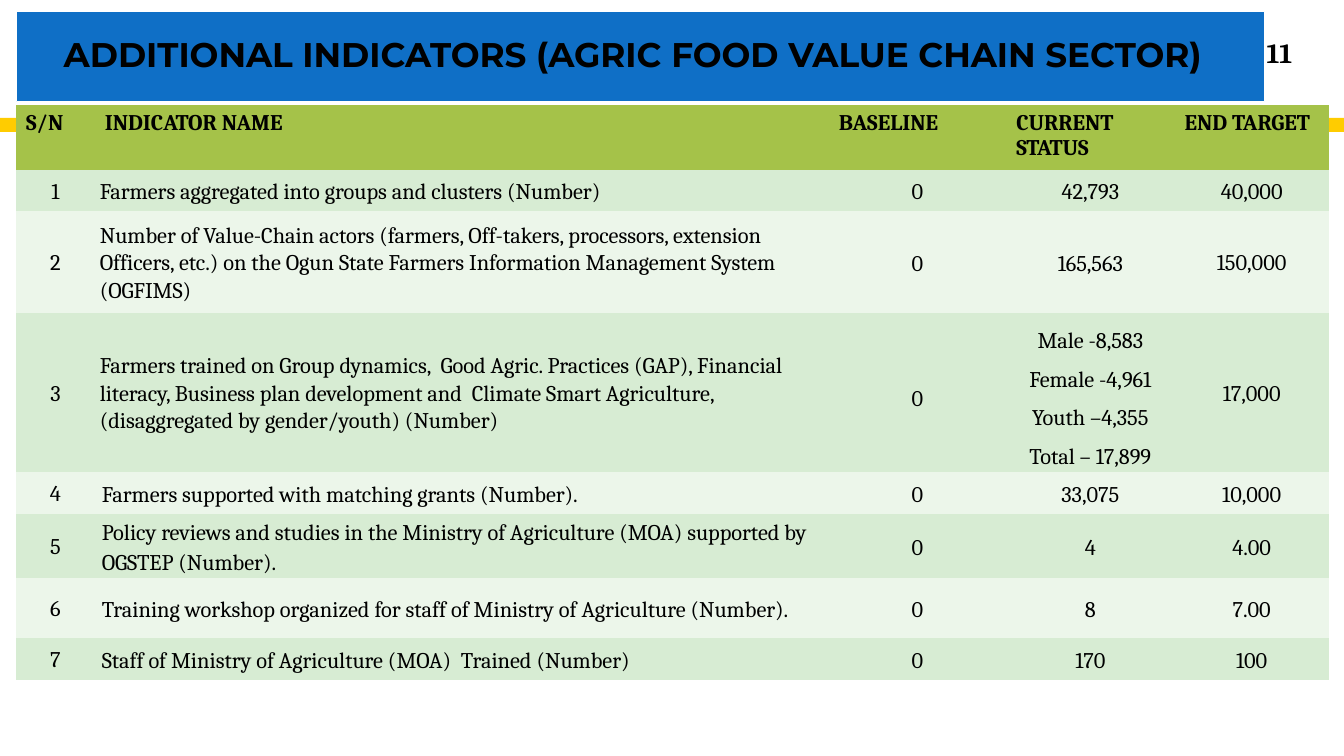
from pptx import Presentation
from pptx.dml.color import RGBColor
from pptx.enum.shapes import MSO_SHAPE
from pptx.enum.text import MSO_ANCHOR, PP_ALIGN
from pptx.oxml.ns import qn
from pptx.util import Inches, Pt

TITLE = "ADDITIONAL INDICATORS (AGRIC FOOD VALUE CHAIN SECTOR)"
PAGE_NUMBER = "11"
HEADINGS = ("S/N", "INDICATOR NAME", "BASELINE", "CURRENT STATUS", "END TARGET")
# indicator, baseline, current status, end target
INDICATORS = [
    ("Farmers aggregated into groups and clusters (Number)", "0", "42,793", "40,000"),
    ("Number of Value-Chain actors (farmers, Off-takers, processors, extension "
     "Officers, etc.) on the Ogun State Farmers Information Management System (OGFIMS)",
     "0", "165,563", "150,000"),
    ("Farmers trained on Group dynamics,  Good Agric. Practices (GAP), Financial "
     "literacy, Business plan development and  Climate Smart Agriculture, "
     "(disaggregated by gender/youth) (Number)",
     "0", "Male -8,583\nFemale -4,961\nYouth –4,355\nTotal – 17,899", "17,000"),
    ("Farmers supported with matching grants (Number).", "0", "33,075", "10,000"),
    ("Policy reviews and studies in the Ministry of Agriculture (MOA) supported by "
     "OGSTEP (Number).", "0", "4", "4.00"),
    ("Training workshop organized for staff of Ministry of Agriculture (Number).",
     "0", "8", "7.00"),
    ("Staff of Ministry of Agriculture (MOA)  Trained (Number)", "0", "170", "100"),
]
COLUMN_WIDTHS = (0.78, 7.28, 1.76, 1.67, 1.53)
ROW_HEIGHTS = (0.65, 0.4, 1.02, 1.57, 0.42, 0.64, 0.59, 0.42)
SERIAL, INDICATOR, BASELINE, STATUS, TARGET = range(5)
GROUPED_ROW = 3  # the row whose status is broken down by gender and youth
COMPACT_ROWS = (1, 2, 3)

BLACK, WHITE, BLUE, YELLOW = "000000", "FFFFFF", "0F6FC6", "FFCC00"
HEADING_GREEN, ROW_GREENS = "A5C249", ("ECF6EA", "D7ECD3")
NO_TABLE_STYLE = "{2D5ABB26-0587-4C30-8999-92F81FD0307C}"


def color(hex_string):
    return RGBColor.from_string(hex_string)


def fill(part, hex_string):
    part.fill.solid()
    part.fill.fore_color.rgb = color(hex_string)


def set_all(target, values):
    for attribute, value in values.items():
        setattr(target, attribute, value)


def write(frame, text, paragraph_format, size, font="Cambria", bold=False):
    frame.text = text
    for paragraph in frame.paragraphs:
        set_all(paragraph, paragraph_format)
        for run in paragraph.runs:
            set_all(run.font, {"size": Pt(size), "name": font, "bold": bold})
            run.font.color.rgb = color(BLACK)


def cell_format(row, column):
    """Return the margins and the paragraph format of a body cell."""
    compact = column == SERIAL or (
        row in COMPACT_ROWS and column in (INDICATOR, TARGET))
    if compact:
        side, top, spacing = (0.05 if column == INDICATOR else 0.01), 0.01, 1.07
    else:
        side, top, spacing = 0.07, 0, 1.5 if row == GROUPED_ROW else 1.15
    margins = {"margin_left": Inches(side), "margin_right": Inches(side),
               "margin_top": Inches(top), "margin_bottom": 0,
               "vertical_anchor": MSO_ANCHOR.MIDDLE}
    paragraph_format = {
        "alignment": PP_ALIGN.LEFT if column == INDICATOR else PP_ALIGN.CENTER,
        "line_spacing": spacing, "space_after": Pt(8 if compact else 0)}
    return margins, paragraph_format


def add_band(slide):
    band = slide.shapes.add_shape(
        MSO_SHAPE.RECTANGLE, 0, Inches(1.17), Inches(13.33), Inches(0.14))
    fill(band, YELLOW)
    band.line.fill.background()
    band.shadow.inherit = False


def add_title(slide):
    title = slide.shapes.title
    set_all(title, {"left": Inches(0.16), "top": Inches(0.11),
                    "width": Inches(12.38), "height": Inches(0.9)})
    fill(title, BLUE)
    title.line.color.rgb = color(WHITE)
    title.line.width = Pt(0.75)
    set_all(title.text_frame, {"vertical_anchor": MSO_ANCHOR.MIDDLE, "word_wrap": True,
                               "margin_left": Inches(0.1), "margin_right": Inches(0.25)})
    write(title.text_frame, TITLE,
          {"alignment": PP_ALIGN.CENTER, "line_spacing": 0.9}, 24.4, "Montserrat", True)


def add_page_number(slide):
    frame = slide.shapes.add_textbox(
        Inches(12.2), Inches(0.32), Inches(0.98), Inches(0.4)).text_frame
    set_all(frame, {"vertical_anchor": MSO_ANCHOR.MIDDLE, "word_wrap": True})
    write(frame, PAGE_NUMBER, {"alignment": PP_ALIGN.CENTER}, 20, bold=True)


def add_indicators(slide):
    rows = [HEADINGS] + [(str(n), *entry) for n, entry in enumerate(INDICATORS, 1)]
    table = slide.shapes.add_table(
        len(rows), len(HEADINGS), Inches(0.16), Inches(1.04),
        Inches(sum(COLUMN_WIDTHS)), Inches(sum(ROW_HEIGHTS))).table
    table.horz_banding = False
    table._tbl.tblPr.find(qn("a:tableStyleId")).text = NO_TABLE_STYLE
    for column, width in zip(table.columns, COLUMN_WIDTHS):
        column.width = Inches(width)
    for r, (values, height) in enumerate(zip(rows, ROW_HEIGHTS)):
        table.rows[r].height = Inches(height)
        for c, value in enumerate(values):
            cell = table.cell(r, c)
            if r == 0:
                fill(cell, HEADING_GREEN)
                write(cell.text_frame, value, {"alignment": PP_ALIGN.LEFT}, 16, bold=True)
            else:
                margins, paragraph_format = cell_format(r, c)
                fill(cell, ROW_GREENS[r % 2])
                set_all(cell, margins)
                write(cell.text_frame, value, paragraph_format, 16)


def main():
    deck = Presentation()
    deck.slide_width, deck.slide_height = Inches(13.33), Inches(7.5)
    slide = deck.slides.add_slide(deck.slide_layouts[5])
    add_band(slide)
    add_indicators(slide)
    add_page_number(slide)
    add_title(slide)
    deck.save("out.pptx")


if __name__ == "__main__":
    main()
